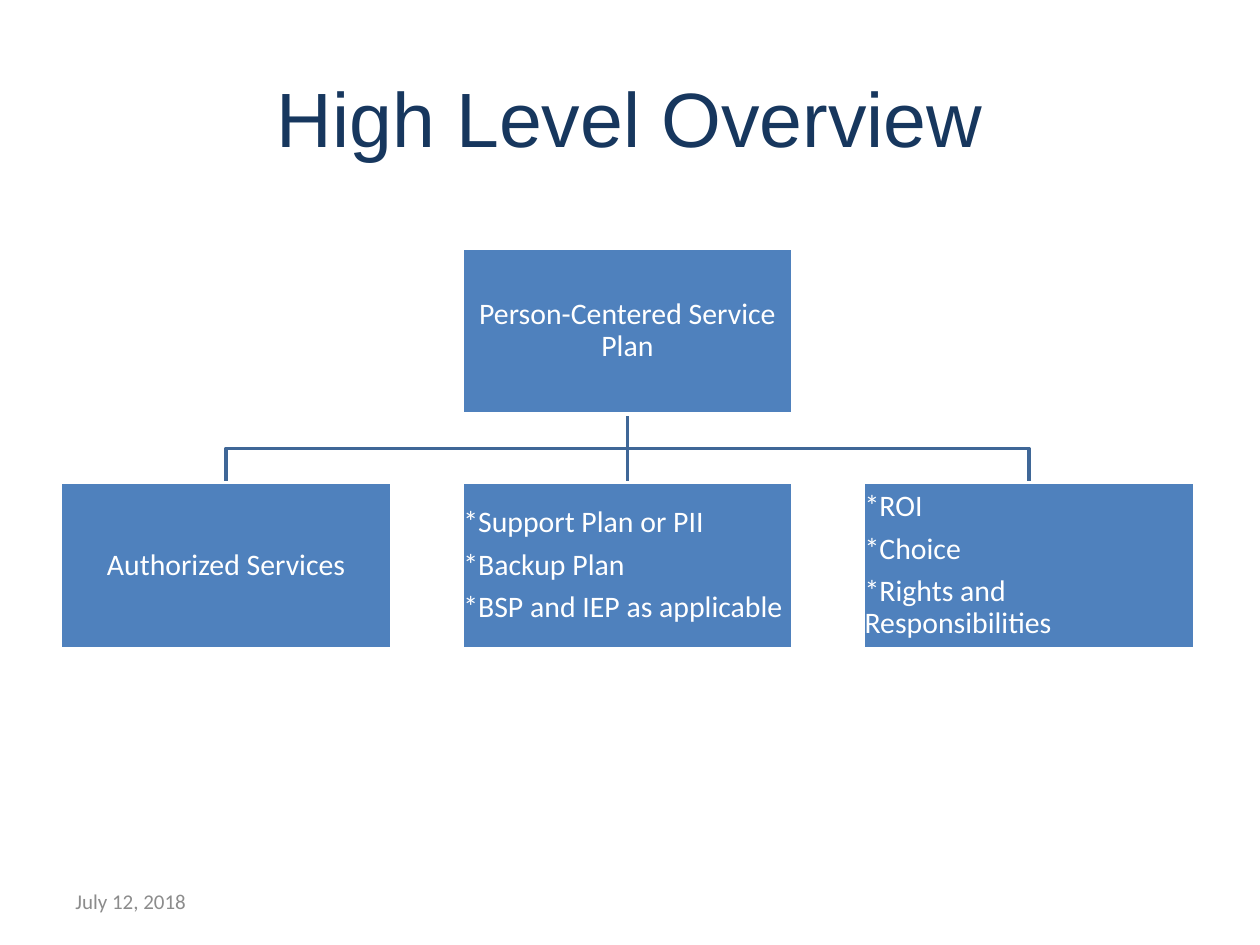
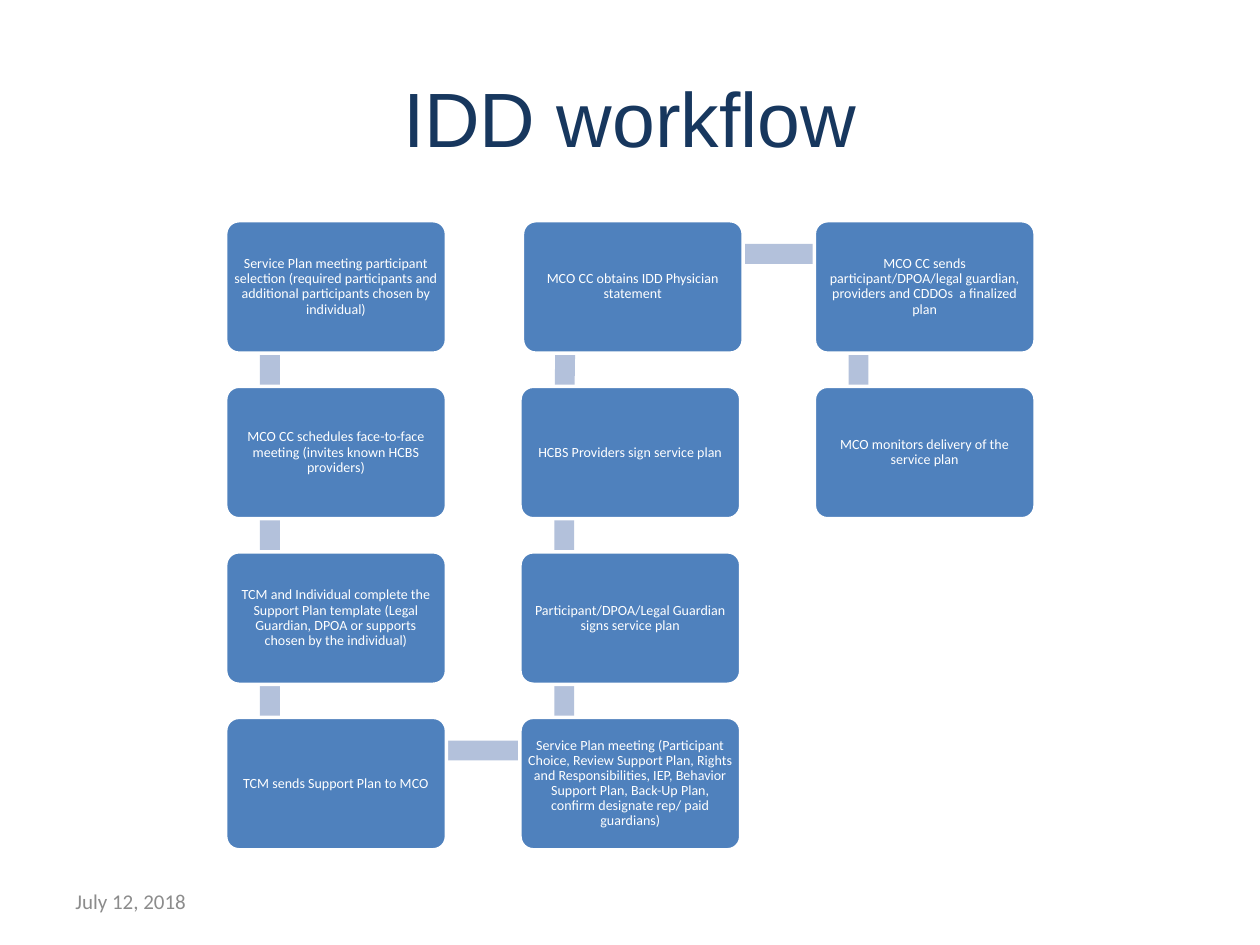
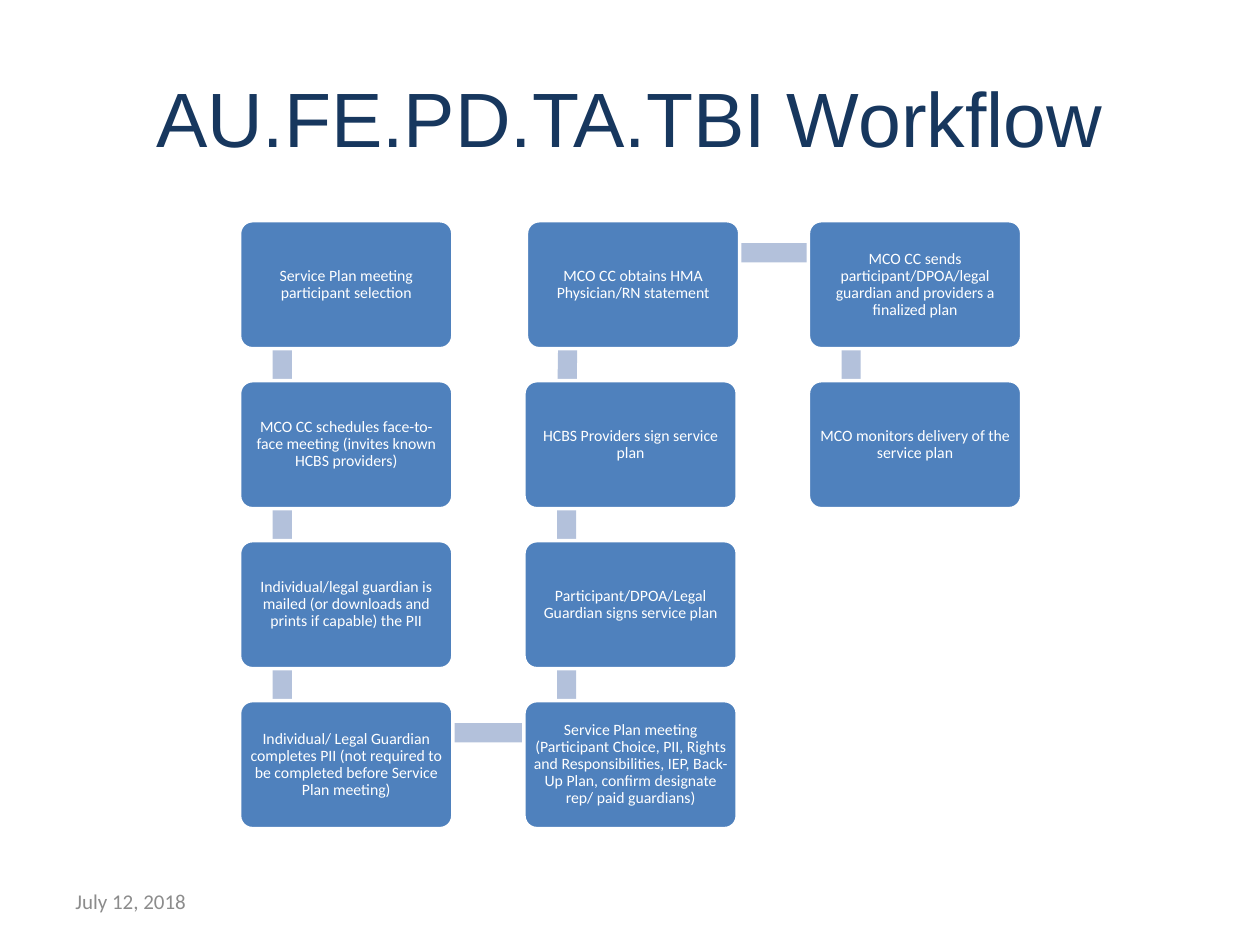
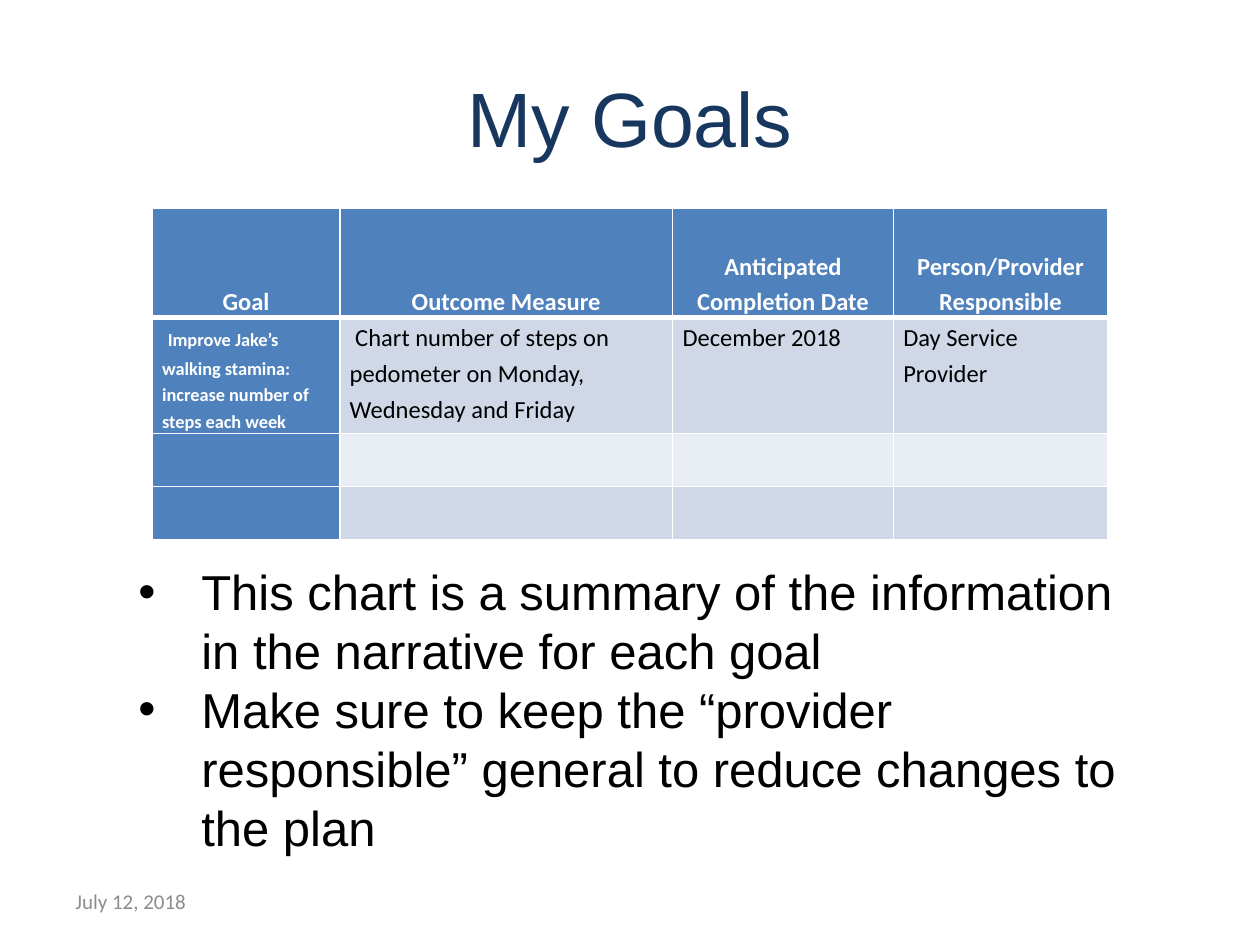
import math

import pptx
import pptx.dml.color
import pptx.enum.shapes
import pptx.enum.text
import pptx.oxml.ns
import pptx.util
from lxml import etree

Cm = pptx.util.Cm
Pt = pptx.util.Pt
SHAPES = pptx.enum.shapes.MSO_SHAPE
ALIGN = pptx.enum.text.PP_ALIGN
ANCHOR = pptx.enum.text.MSO_ANCHOR
qn = pptx.oxml.ns.qn

COLORS = {
    "title": "17375E",
    "node": "4F81BD",
    "branch": "3F6797",
    "bar": "B3C1DB",
    "date": "8C8C8C",
    "band_dark": "D0D8E8",
    "band_light": "E9EDF4",
    "white": "FFFFFF",
    "black": "000000",
}


def rgb(name):
    return pptx.dml.color.RGBColor.from_string(COLORS[name])


class Deck:
    """Holds the shared style and the slide being filled."""

    heading_font = "Arial"
    body_font = "Calibri"
    date = "July 12, 2018"

    def __init__(self):
        self.presentation = pptx.Presentation()
        self.presentation.slide_width = Cm(25.4)
        self.presentation.slide_height = Cm(19.05)
        self.slide = None

    def new_slide(self, title):
        layout = self.presentation.slide_layouts[6]
        self.slide = self.presentation.slides.add_slide(layout)
        frame = self.text_box(1.27, 0.76, 22.86, 3.18, ANCHOR.MIDDLE)
        paragraph = frame.paragraphs[0]
        paragraph.alignment = ALIGN.CENTER
        self.run(paragraph, title, 44, "title", self.heading_font)
        frame = self.text_box(1.27, 17.65, 5.93, 1.02, ANCHOR.MIDDLE)
        self.run(frame.paragraphs[0], self.date, 12, "date")

    def text_box(self, left, top, width, height, anchor=ANCHOR.TOP):
        box = self.slide.shapes.add_textbox(Cm(left), Cm(top), Cm(width), Cm(height))
        frame = box.text_frame
        frame.word_wrap = True
        frame.vertical_anchor = anchor
        return frame

    def run(self, paragraph, text, size, color, font=None, bold=False):
        run = paragraph.add_run()
        run.text = text
        run.font.size = Pt(size)
        run.font.name = font or self.body_font
        run.font.bold = bold
        run.font.color.rgb = rgb(color)

    def paragraphs(self, frame, count):
        """Yield the first paragraph of a frame, then added ones."""
        for index in range(count):
            yield frame.add_paragraph() if index else frame.paragraphs[0]

    def shape(self, kind, left, top, width, height, fill, line=None):
        shape = self.slide.shapes.add_shape(kind, Cm(left), Cm(top), Cm(width), Cm(height))
        shape.shadow.inherit = False
        shape.fill.solid()
        shape.fill.fore_color.rgb = rgb(fill)
        if line:
            shape.line.color.rgb = rgb(line)
            shape.line.width = Pt(2)
        else:
            shape.line.fill.background()
        return shape

    def node(self, kind, left, top, width, height, lines, size, margin, align=ALIGN.CENTER):
        shape = self.shape(kind, left, top, width, height, "node", "white")
        if kind == SHAPES.ROUNDED_RECTANGLE:
            shape.adjustments[0] = 0.1
        frame = shape.text_frame
        frame.word_wrap = True
        frame.vertical_anchor = ANCHOR.MIDDLE
        frame.margin_left = frame.margin_right = Cm(margin)
        frame.margin_top = frame.margin_bottom = Cm(margin)
        for paragraph, text in zip(self.paragraphs(frame, len(lines)), lines):
            paragraph.alignment = align
            paragraph.line_spacing = 0.9
            paragraph.space_after = Pt(0.35 * size)
            self.run(paragraph, text, size, "white")

    def branch(self, points):
        """Draw a straight connector, or an open outline when it bends."""
        points = [(Cm(x), Cm(y)) for x, y in points]
        if len(points) == 2:
            line = self.slide.shapes.add_connector(
                pptx.enum.shapes.MSO_CONNECTOR.STRAIGHT, *points[0], *points[1])
            etree.SubElement(line._element.spPr, qn("a:effectLst"))
        else:
            builder = self.slide.shapes.build_freeform(*points[0])
            builder.add_line_segments(points[1:], close=False)
            line = builder.convert_to_shape()
            line.shadow.inherit = False
            line.fill.background()
        line.line.color.rgb = rgb("branch")
        line.line.width = Pt(2)

    def bar(self, start, end, thickness):
        """Draw a flat bar whose centre line joins two points."""
        run, rise = end[0] - start[0], end[1] - start[1]
        length = math.hypot(run, rise)
        left = (start[0] + end[0] - length) / 2
        top = (start[1] + end[1] - thickness) / 2
        shape = self.shape(SHAPES.RECTANGLE, left, top, length, thickness, "bar")
        shape.rotation = math.degrees(math.atan2(rise, run)) % 360

    def workflow(self, left, width, height, steps, size, margin):
        """Lay steps out in columns of four, down, up and down again."""
        top, per_column, shifted_step = 4.45, 4, 7
        places = []
        for index in range(len(steps)):
            column, row = divmod(index, per_column)
            if column % 2:
                row = per_column - 1 - row
            nudge = 0.05 if index == shifted_step else 0
            places.append((left + column * width * 4 / 3 + nudge, top + row * height * 1.25))
        joints = [(x + 0.2 * width, y + 0.25 * height) for x, y in places]
        for index, (x, y) in enumerate(places):
            if index + 1 < len(places):
                self.bar(joints[index], joints[index + 1], 0.15 * height)
            self.node(SHAPES.ROUNDED_RECTANGLE, x, y, width, height, [steps[index]], size, margin)

    def cell(self, cell, runs, fill, color, bold, header, borders):
        properties = cell._tc.get_or_add_tcPr()
        for side, points in borders.items():
            line = etree.SubElement(properties, qn("a:ln" + side), w=str(Pt(points)))
            solid = etree.SubElement(line, qn("a:solidFill"))
            etree.SubElement(solid, qn("a:srgbClr"), val=COLORS["white"])
        cell.fill.solid()
        cell.fill.fore_color.rgb = rgb(fill)
        cell.margin_left = cell.margin_right = Cm(0.2)
        cell.margin_top = cell.margin_bottom = 0
        cell.vertical_anchor = ANCHOR.BOTTOM if header else ANCHOR.TOP
        paragraph = cell.text_frame.paragraphs[0]
        if runs:
            paragraph.line_spacing = 1.2
            if header:
                paragraph.alignment = ALIGN.CENTER
            else:
                paragraph.space_after = Pt(10)
        for text, size in runs:
            self.run(paragraph, text, size, color, bold=bold)

    def table(self, left, top, widths, heights, rows):
        frame = self.slide.shapes.add_table(
            len(heights), len(widths), Cm(left), Cm(top), Cm(sum(widths)), Cm(sum(heights)))
        table = frame.table
        for column, width in zip(table.columns, widths):
            column.width = Cm(width)
        for row, height in zip(table.rows, heights):
            row.height = Cm(height)
        for r in range(len(heights)):
            borders = {"L": 1, "R": 1, "T": 3 if r == 1 else 1, "B": 3 if r == 0 else 1}
            for c in range(len(widths)):
                strong = r == 0 or c == 0
                band = "band_dark" if r % 2 else "band_light"
                self.cell(table.cell(r, c), rows[r][c] if r < len(rows) else [],
                          "node" if strong else band, "white" if strong else "black",
                          strong, r == 0, borders)

    def bullets(self, left, top, width, height, items):
        frame = self.text_box(left, top, width, height)
        for paragraph, text in zip(self.paragraphs(frame, len(items)), items):
            properties = paragraph._p.get_or_add_pPr()
            properties.set("marL", str(Cm(1.27)))
            properties.set("indent", str(-Cm(1.27)))
            etree.SubElement(properties, qn("a:buFont"), typeface=self.heading_font)
            etree.SubElement(properties, qn("a:buChar"), char="•")
            self.run(paragraph, text, 28, "black", self.heading_font)


def overview(deck):
    deck.new_slide("High Level Overview")
    width, height, pitch = 6.68, 3.35, 8.09
    left, root_top, child_top = 1.22, 5.0, 9.73
    lefts = [left + column * pitch for column in range(3)]
    centers = [x + width / 2 for x in lefts]

    # Branches from the plan down to its parts
    root_bottom = root_top + height
    middle = (root_bottom + child_top) / 2
    root = (centers[1], root_bottom)
    for center in reversed(centers):
        bend = [] if center == centers[1] else [(centers[1], middle), (center, middle)]
        deck.branch([root, *bend, (center, child_top)])

    # Plan and its parts
    nodes = [
        (lefts[1], root_top, ["Person-Centered Service Plan"]),
        (lefts[0], child_top, ["Authorized Services"]),
        (lefts[1], child_top,
         ["*Support Plan or PII", "*Backup Plan", "*BSP and IEP as applicable"]),
        (lefts[2], child_top, ["*ROI", "*Choice", "*Rights and Responsibilities"]),
    ]
    for x, y, lines in nodes:
        align = ALIGN.LEFT if len(lines) > 1 else ALIGN.CENTER
        deck.node(SHAPES.RECTANGLE, x, y, width, height, lines, 17, 0.03, align)


def idd_workflow(deck):
    deck.new_slide("IDD workflow")
    deck.workflow(4.55, 4.45, 2.67, [
        "Service Plan meeting participant selection (required participants and additional "
        "participants chosen by individual)",
        "MCO CC schedules face-to-face meeting (invites known HCBS providers)",
        "TCM and Individual complete the Support Plan template (Legal Guardian, DPOA or "
        "supports chosen by the individual)",
        "TCM sends Support Plan to MCO",
        "Service Plan meeting (Participant Choice, Review Support Plan, Rights and "
        "Responsibilities, IEP, Behavior Support Plan, Back-Up Plan, confirm designate rep/ "
        "paid guardians)",
        "Participant/DPOA/Legal Guardian signs service plan",
        "HCBS Providers sign service plan",
        "MCO CC obtains IDD Physician statement",
        "MCO CC sends participant/DPOA/legal guardian, providers and CDDOs  a finalized plan",
        "MCO monitors delivery of the service plan",
    ], 8, 0.08)


def other_workflow(deck):
    deck.new_slide("AU.FE.PD.TA.TBI Workflow")
    deck.workflow(4.83, 4.3, 2.58, [
        "Service Plan meeting participant selection",
        "MCO CC schedules face-to-face meeting (invites known HCBS providers)",
        "Individual/legal guardian is mailed (or downloads and prints if capable) the PII",
        "Individual/ Legal Guardian completes PII (not required to be completed before "
        "Service Plan meeting)",
        "Service Plan meeting (Participant Choice, PII, Rights and Responsibilities, IEP, "
        "Back-Up Plan, confirm designate rep/ paid guardians)",
        "Participant/DPOA/Legal Guardian signs service plan",
        "HCBS Providers sign service plan",
        "MCO CC obtains HMA Physician/RN statement",
        "MCO CC sends participant/DPOA/legal guardian and providers a finalized plan",
        "MCO monitors delivery of the service plan",
    ], 9, 0.09)


def goals(deck):
    deck.new_slide("My Goals")
    headers = ["Goal", "Outcome Measure", "Anticipated Completion Date",
               "Person/Provider Responsible"]
    goal = [
        [(" ", 14),
         ("Improve Jake’s walking stamina: increase number of steps each week", 10.5)],
        [(" Chart number of steps on pedometer on Monday, Wednesday and Friday", 14)],
        [("December 2018", 14)],
        [("Day Service Provider", 14)],
    ]
    deck.table(3.07, 4.19, [3.78, 6.71, 4.45, 4.32], [2.21, 2.34, 1.07, 1.07],
               [[[(header, 14)] for header in headers], goal])
    deck.bullets(2.54, 11.2, 20.32, 6.25, [
        "This chart is a summary of the information in the narrative for each goal",
        "Make sure to keep the “provider responsible” general to reduce changes to the plan",
    ])


def main():
    deck = Deck()
    for build in (overview, idd_workflow, other_workflow, goals):
        build(deck)
    deck.presentation.save("out.pptx")


if __name__ == "__main__":
    main()
